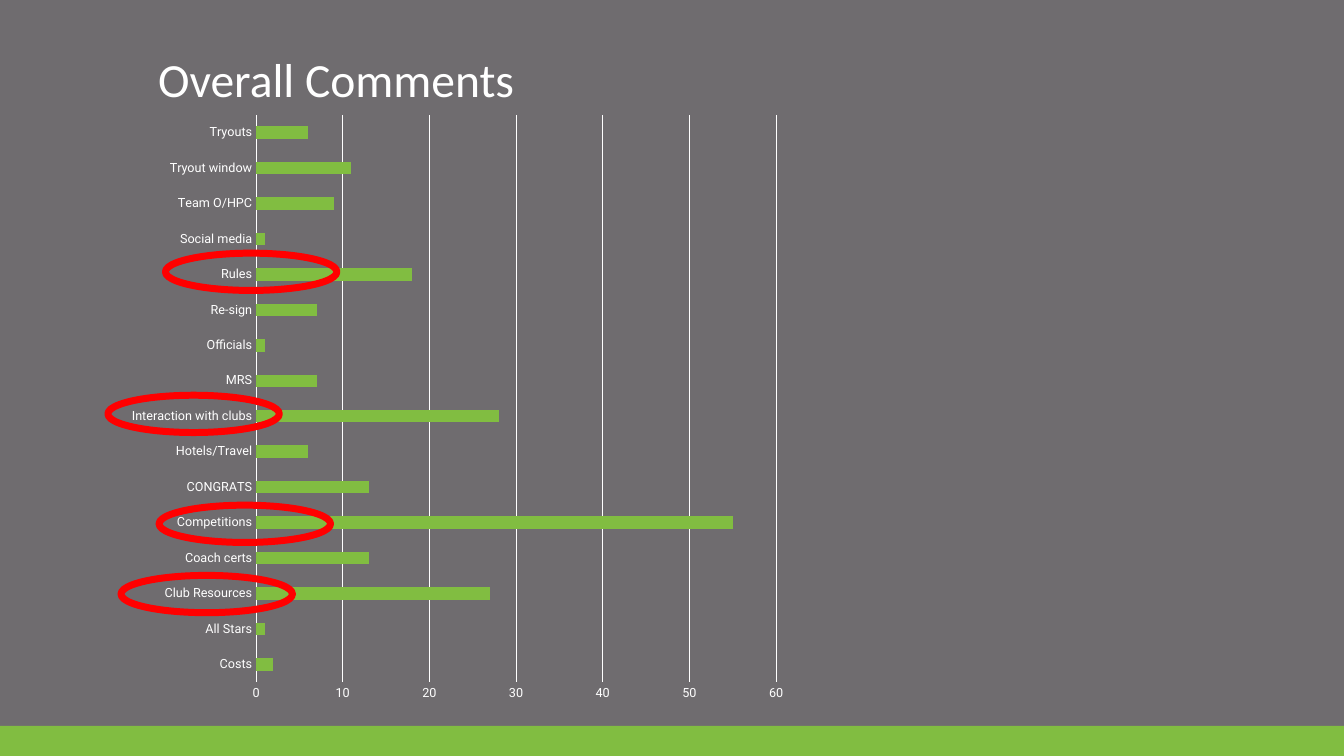
from dataclasses import dataclass

from pptx import Presentation, oxml
from pptx import util as u
from pptx.chart.data import CategoryChartData
from pptx.dml.color import RGBColor
from pptx.enum import chart as charts, shapes, text
from pptx.oxml.ns import nsdecls, qn

COLOURS = {"background": "6F6C6F", "green": "81BD41", "white": "FFFFFF", "red": "FF0000"}

COMMENT_COUNTS = {
    "Costs": 2, "All Stars": 1, "Club Resources": 27, "Coach certs": 13,
    "Competitions": 55, "CONGRATS": 13, "Hotels/Travel": 6,
    "Interaction with clubs": 28, "MRS": 7, "Officials": 1, "Re-sign": 7,
    "Rules": 18, "Social media": 1, "Team O/HPC": 9, "Tryout window": 11, "Tryouts": 6,
}


@dataclass(frozen=True)
class Box:
    left: float
    top: float
    width: float
    height: float

    def emu(self) -> tuple:
        return tuple(u.Cm(v) for v in (self.left, self.top, self.width, self.height))


SLIDE = Box(0, 0, 33.87, 19.05)
FOOTER_BAND = Box(0, 18.29, 33.87, 0.76)
TITLE = Box(3.73, 1.3, 26.42, 3.43)
CHART = Box(3.05, 2.59, 17.02, 15.37)
HIGHLIGHTS = [
    Box(left, top, 4.32, 0.94)
    for left, top in ((4.17, 6.38), (2.72, 9.96), (4.01, 12.73), (3.05, 14.5))
]


def colour(name: str) -> RGBColor:
    return RGBColor.from_string(COLOURS[name])


def apply_format(target, values: dict) -> None:
    for name, value in values.items():
        setattr(target, name, value)


def format_font(font, size: float, name: str) -> None:
    apply_format(font, {"size": u.Pt(size), "name": name, "bold": False})
    font.color.rgb = colour("white")


def format_line(line, name: str, width: float) -> None:
    line.color.rgb = colour(name)
    line.width = u.Pt(width)


def add_footer_band(slide) -> None:
    band = slide.shapes.add_shape(shapes.MSO_SHAPE.RECTANGLE, *FOOTER_BAND.emu())
    band.shadow.inherit = False
    band.fill.solid()
    band.fill.fore_color.rgb = colour("green")
    band.line.fill.background()


def add_highlight(slide, box: Box) -> None:
    ellipse = slide.shapes.add_shape(shapes.MSO_SHAPE.OVAL, *box.emu())
    ellipse.shadow.inherit = False
    ellipse.fill.background()
    format_line(ellipse.line, "red", 5)


def fill_title(slide) -> None:
    title = slide.shapes.title
    apply_format(title, dict(zip(("left", "top", "width", "height"), TITLE.emu())))
    apply_format(title.text_frame, {
        "text": "Overall Comments",
        "word_wrap": True,
        "auto_size": text.MSO_AUTO_SIZE.NONE,
        "vertical_anchor": text.MSO_ANCHOR.TOP,
    })
    paragraph = title.text_frame.paragraphs[0]
    apply_format(paragraph, {"alignment": text.PP_ALIGN.LEFT, "line_spacing": 0.9})
    format_font(paragraph.runs[0].font, 34, "Calibri")


def fix_plot_area(chart, x: float, y: float, width: float, height: float) -> None:
    """Place the inner plot area, in fractions of the chart's size."""
    plot_area = chart._chartSpace.chart.plotArea
    for layout in plot_area.findall(qn("c:layout")):
        plot_area.remove(layout)
    plot_area.insert(0, oxml.parse_xml(
        f'<c:layout {nsdecls("c")}><c:manualLayout><c:layoutTarget val="inner"/>'
        '<c:xMode val="edge"/><c:yMode val="edge"/>'
        f'<c:x val="{x}"/><c:y val="{y}"/><c:w val="{width}"/><c:h val="{height}"/>'
        '</c:manualLayout></c:layout>'))


def add_comment_chart(slide) -> None:
    data = CategoryChartData()
    data.categories = list(COMMENT_COUNTS)
    data.add_series("Series 1", list(COMMENT_COUNTS.values()))
    chart = slide.shapes.add_chart(
        charts.XL_CHART_TYPE.BAR_CLUSTERED, *CHART.emu(), data).chart
    apply_format(chart, {"has_legend": False, "has_title": False})
    format_font(chart.font, 10, "Roboto")

    plot = chart.plots[0]
    apply_format(plot, {"gap_width": 182, "vary_by_categories": False})
    bars = plot.series[0].format.fill
    bars.solid()
    bars.fore_color.rgb = colour("green")

    for axis in (chart.category_axis, chart.value_axis):
        apply_format(axis, {
            "major_tick_mark": charts.XL_TICK_MARK.NONE,
            "minor_tick_mark": charts.XL_TICK_MARK.NONE,
        })
        format_font(axis.tick_labels.font, 9, "Roboto")
    format_line(chart.category_axis.format.line, "white", 0.75)
    apply_format(chart.value_axis, {
        "minimum_scale": 0, "maximum_scale": 60, "major_unit": 10,
        "has_major_gridlines": True,
    })
    chart.value_axis.format.line.fill.background()
    format_line(chart.value_axis.major_gridlines.format.line, "white", 0.75)
    fix_plot_area(chart, 0.2, 0.02, 0.77, 0.93)


def main() -> None:
    presentation = Presentation()
    apply_format(presentation, {
        "slide_width": u.Cm(SLIDE.width), "slide_height": u.Cm(SLIDE.height),
    })
    slide = presentation.slides.add_slide(presentation.slide_layouts[5])
    slide.background.fill.solid()
    slide.background.fill.fore_color.rgb = colour("background")
    add_footer_band(slide)
    fill_title(slide)
    add_comment_chart(slide)
    for box in HIGHLIGHTS:
        add_highlight(slide, box)
    presentation.save("out.pptx")


if __name__ == "__main__":
    main()
